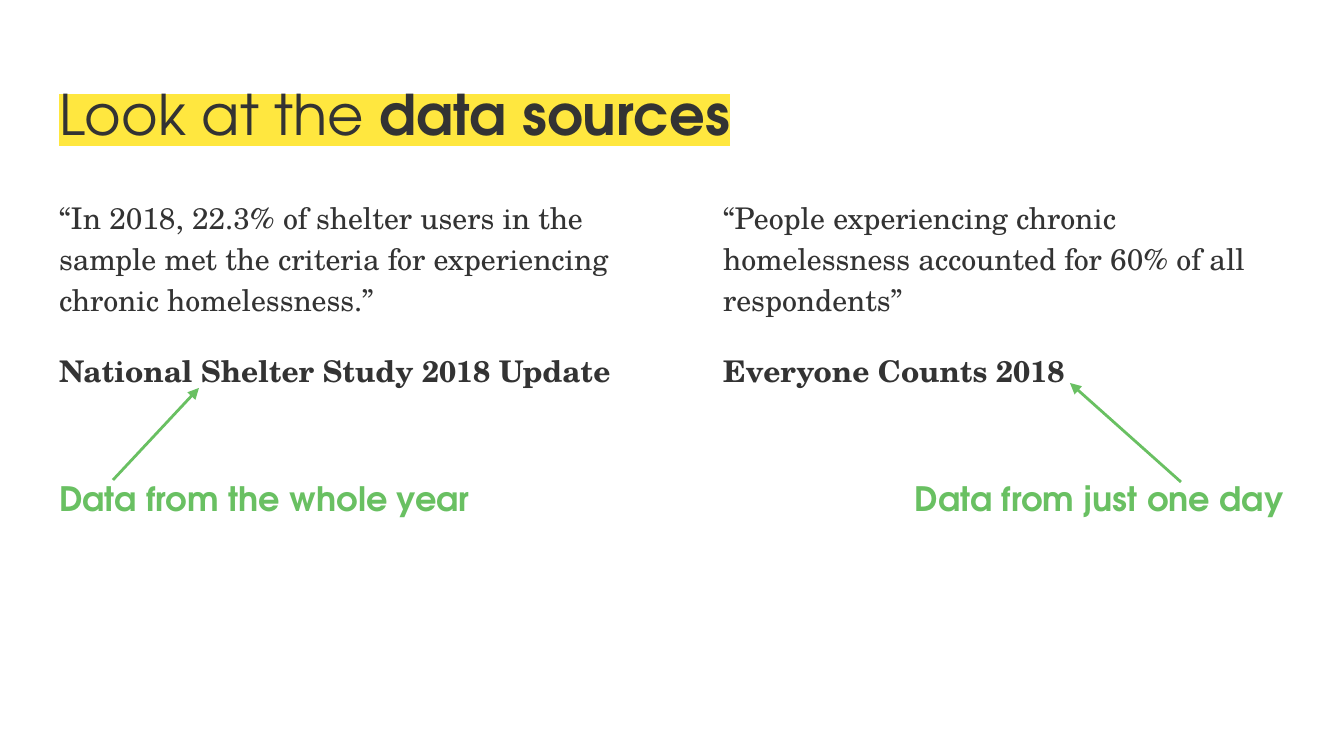
from lxml import etree
from pptx import Presentation
from pptx import util as u
from pptx.dml.color import RGBColor
from pptx.enum import shapes, text
from pptx.oxml.ns import qn

PX = 9144000 / 1344  # EMU per px
INK = RGBColor(0x33, 0x33, 0x33)
GREEN = RGBColor(0x69, 0xC0, 0x62)
YELLOW = RGBColor(0xFF, 0xE7, 0x3F)
SANS, SERIF = "TeX Gyre Adventor", "TeX Gyre Schola"


def px(*lengths):
    return [u.Emu(round(length * PX)) for length in lengths]


def add_text(paragraphs, box, font, size, color=INK, highlight=None, spacing=None,
             gap=0, align=text.PP_ALIGN.LEFT, anchor=text.MSO_ANCHOR.TOP):
    """Each paragraph is a list of (wording, bold) runs; gap surrounds later paragraphs."""
    frame = slide.shapes.add_textbox(*px(*box)).text_frame
    frame.word_wrap = True
    frame.vertical_anchor = anchor
    frame.margin_left = frame.margin_right = u.Inches(0.1)
    frame.margin_top = frame.margin_bottom = u.Inches(0.1)
    for i, runs in enumerate(paragraphs):
        paragraph = frame.add_paragraph() if i else frame.paragraphs[0]
        paragraph.alignment = align
        if spacing:
            paragraph.line_spacing = spacing
        if i:
            paragraph.space_before = paragraph.space_after = u.Pt(gap)
        for wording, bold in runs:
            run = paragraph.add_run()
            run.text = wording
            run.font.size, run.font.bold = u.Pt(size), bold
            run.font.color.rgb = color
            if highlight:
                mark = etree.SubElement(run.font._element, qn("a:highlight"))
                etree.SubElement(mark, qn("a:srgbClr"), val=str(highlight))
            run.font.name = font


prs = Presentation()
prs.slide_width, prs.slide_height = px(1344, 756)
slide = prs.slides.add_slide(prs.slide_layouts[6])

# Title
add_text([[("Look at the ", False), ("data sources", True)]], (46, 66, 1253, 85),
         SANS, 30, highlight=YELLOW)

# Two columns: quote with its source, and a remark on the period covered
columns = [
    (46, "“In 2018, 22.3% of shelter users in the sample met the criteria for "
         "experiencing chronic homelessness.”",
     "National Shelter Study 2018 Update", "Data from the whole year",
     text.PP_ALIGN.LEFT),
    (710, "“People experiencing chronic homelessness accounted for 60% of all respondents”",
     "Everyone Counts 2018", "Data from just one day", text.PP_ALIGN.RIGHT),
]
for left, quote, source, remark, align in columns:
    add_text([[(quote, False)], [(source, True)]], (left, 181, 587, 228),
             SERIF, 16, spacing=1.15, gap=16)
    add_text([[(remark, True)]], (left, 472, 587, 60), SANS, 18, color=GREEN,
             align=align, anchor=text.MSO_ANCHOR.BOTTOM)

# Arrows from each remark up to its source
for ends in [(113, 480, 199, 388), (1181, 482, 1070, 383)]:
    arrow = slide.shapes.add_connector(shapes.MSO_CONNECTOR.STRAIGHT, *px(*ends))
    arrow.line.color.rgb = GREEN
    arrow.line.width = u.Pt(1.5)
    etree.SubElement(arrow.line._get_or_add_ln(), qn("a:tailEnd"), type="triangle")
    etree.SubElement(arrow._element.spPr, qn("a:effectLst"))

prs.save("out.pptx")
